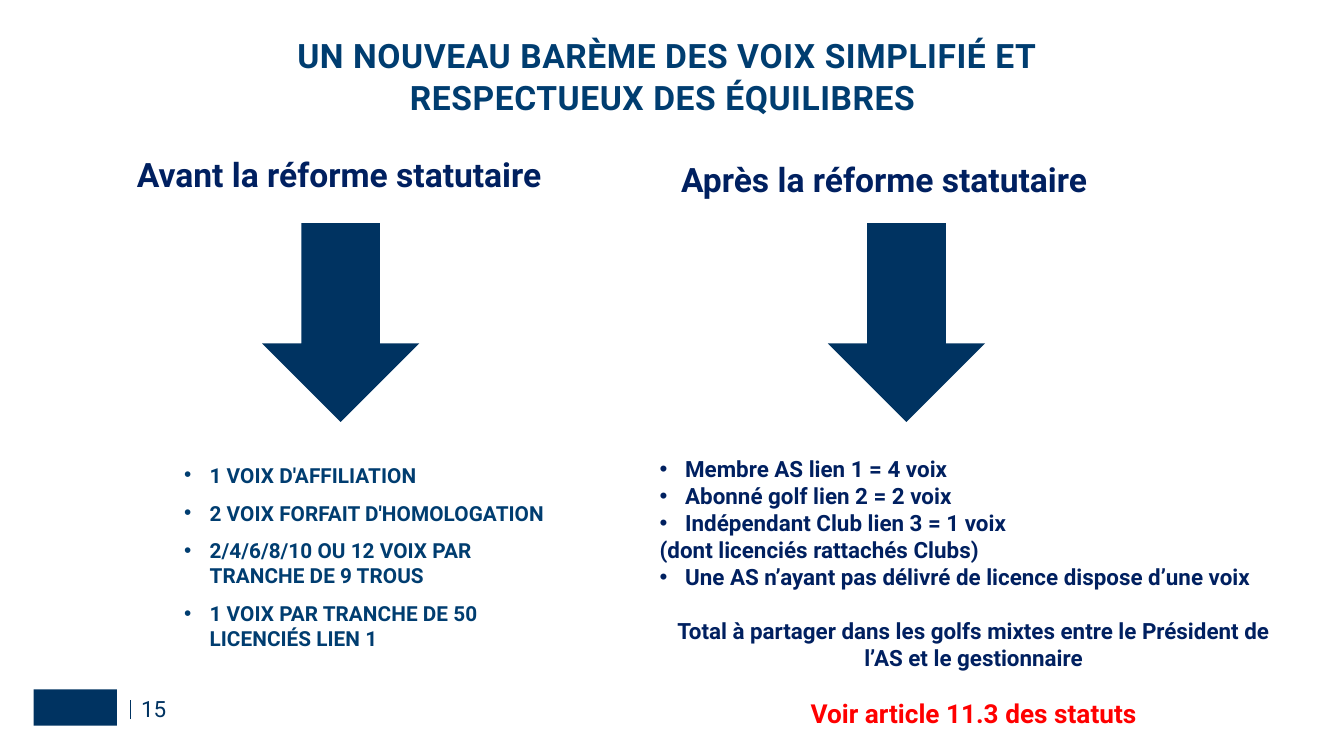
from dataclasses import dataclass

from lxml.etree import SubElement
from pptx import Presentation
from pptx.dml.color import RGBColor
from pptx.enum.shapes import MSO_CONNECTOR, MSO_SHAPE
from pptx.enum.text import MSO_ANCHOR, MSO_AUTO_SIZE, PP_ALIGN
from pptx.oxml.ns import qn
from pptx.util import Inches, Pt


@dataclass(frozen=True)
class Theme:
    """Colours, fonts and type sizes of the slide."""
    font: str = "Roboto"
    dot: str = "Arial"
    blue: str = "003D70"
    navy: str = "002060"
    deep: str = "003361"
    red: str = "FF0000"
    head: float = 18
    note: float = 14
    body: float = 12
    small: float = 11.1


THEME = Theme()


def grid(*cells):
    """Turn columns and rows of a tenth of an inch into lengths."""
    return [Inches(cell / 10) for cell in cells]


def shift(box, left, top, width, height):
    """Return a part's box from its offset within a region's box."""
    return box[0] + left, box[1] + top, width, height


def style(para, size, color, bold=True):
    """Format every run of a paragraph."""
    for run in para.runs:
        font = run.font
        font.name, font.size, font.bold = THEME.font, Pt(size), bold
        font.color.rgb = RGBColor.from_string(color)


def bullet(para):
    """Give a paragraph a hanging bullet."""
    props = para._p.get_or_add_pPr()
    props.set("marL", str(Inches(0.19)))
    props.set("indent", str(-Inches(0.19)))
    SubElement(props, qn("a:buFont")).set("typeface", THEME.dot)
    SubElement(props, qn("a:buChar")).set("char", "•")


def inset(frame, size=0):
    """Set all four margins of a text frame."""
    frame.margin_left = frame.margin_right = Inches(size)
    frame.margin_top = frame.margin_bottom = Inches(size)


def write(slide, box, lines, size, color, bold=True):
    """Add a wrapped text box with one paragraph per line."""
    frame = slide.shapes.add_textbox(*grid(*box)).text_frame
    frame.word_wrap = True
    frame.text = "\n".join(lines)
    for para in frame.paragraphs:
        style(para, size, color, bold)
    return frame


def paint(shape):
    """Fill a shape with the deep blue, without outline or shadow."""
    shape.shadow.inherit = False
    shape.fill.solid()
    shape.fill.fore_color.rgb = RGBColor.from_string(THEME.deep)
    shape.line.fill.background()


def title(slide, box, lines):
    """Place the centred title."""
    shape = slide.shapes.title
    shape.left, shape.top, shape.width, shape.height = grid(*box)
    frame = shape.text_frame
    frame.auto_size = MSO_AUTO_SIZE.NONE
    frame.vertical_anchor = MSO_ANCHOR.TOP
    frame.word_wrap = True
    inset(frame)
    frame.text = "\n".join(lines)
    for rank, para in enumerate(frame.paragraphs):
        para.alignment = PP_ALIGN.CENTER
        para.space_before = Pt(1 if rank else 0)
        style(para, THEME.head, THEME.blue)
        for run in para.runs:
            run._r.get_or_add_rPr().set("spc", "30")


def column(slide, box, head, nudge):
    """Place a heading and the arrow beneath it."""
    write(slide, shift(box, *nudge, 35.3, 4), [head], THEME.head, THEME.navy)
    arrow = shift(box, 10.3, 5.6, 11.7, 14.8)
    paint(slide.shapes.add_shape(MSO_SHAPE.DOWN_ARROW, *grid(*arrow)))


def before(slide, box):
    """Place the column of the old rules."""
    column(slide, box, "Avant la réforme statutaire", (0, 0))
    lines = ["1 VOIX D'AFFILIATION",
             "2 VOIX FORFAIT D'HOMOLOGATION",
             "2/4/6/8/10 OU 12 VOIX PAR TRANCHE DE 9 TROUS",
             "1 VOIX PAR TRANCHE DE 50 LICENCIÉS LIEN 1"]
    frame = write(slide, shift(box, 4.5, 23.4, 28.3, 14.1), lines,
                  THEME.small, THEME.blue)
    inset(frame)
    for rank, para in enumerate(frame.paragraphs):
        para.space_before = Pt(3 if rank else 0)
        para.space_after = Pt(4)
        bullet(para)


def after(slide, box):
    """Place the column of the new rules."""
    column(slide, box, "Après la réforme statutaire", (-1.6, 0.3))
    points = ["Membre AS lien 1 = 4 voix",
              "Abonné golf lien 2 = 2 voix",
              "Indépendant Club lien 3 = 1 voix",
              "(dont licenciés rattachés Clubs)",
              "Une AS n’ayant pas délivré de licence dispose d’une voix"]
    notes = ["Total à partager dans les golfs mixtes entre le Président de "
             "l’AS et le gestionnaire",
             "Voir article 11.3 des statuts"]
    frame = write(slide, shift(box, -3.2, 22.4, 48.7, 21.5), points + notes,
                  THEME.body, THEME.navy)
    paras = frame.paragraphs
    for para in paras[:len(points)]:
        if not para.text.startswith("("):
            bullet(para)
    for para in paras[len(points):]:
        para.alignment = PP_ALIGN.CENTER
        para.space_before = Pt(14.4)
    style(paras[-1], THEME.note, THEME.red)


def footer(slide, box, number):
    """Place the emblem block, the divider and the page number."""
    mark = shift(box, 0, 0, 6.2, 2.7)
    paint(slide.shapes.add_shape(MSO_SHAPE.RECTANGLE, *grid(*mark)))
    left, top = box[0] + 7.2, box[1] + 0.8
    rule = slide.shapes.add_connector(
        MSO_CONNECTOR.STRAIGHT, *grid(left, top + 1.4, left, top))
    rule.line.color.rgb = RGBColor.from_string(THEME.deep)
    rule.line.width = Pt(0.5)
    SubElement(rule._element.spPr, qn("a:effectLst"))
    frame = write(slide, shift(box, 8, 0.4, 23.3, 2), [number],
                  THEME.body, THEME.deep, False)
    inset(frame)
    frame.vertical_anchor = MSO_ANCHOR.MIDDLE


def main():
    """Build and save the slide."""
    deck = Presentation()
    deck.slide_width, deck.slide_height = grid(100, 56.25)
    slide = deck.slides.add_slide(deck.slide_layouts[5])
    title(slide, (6.6, 2.6, 86.1, 6.3),
          ["UN NOUVEAU BARÈME DES VOIX SIMPLIFIÉ ET",
           "RESPECTUEUX DES ÉQUILIBRES "])
    before(slide, (9.2, 11))
    after(slide, (51.3, 11))
    footer(slide, (2.5, 51.3), "15")
    deck.save("out.pptx")


if __name__ == "__main__":
    main()
